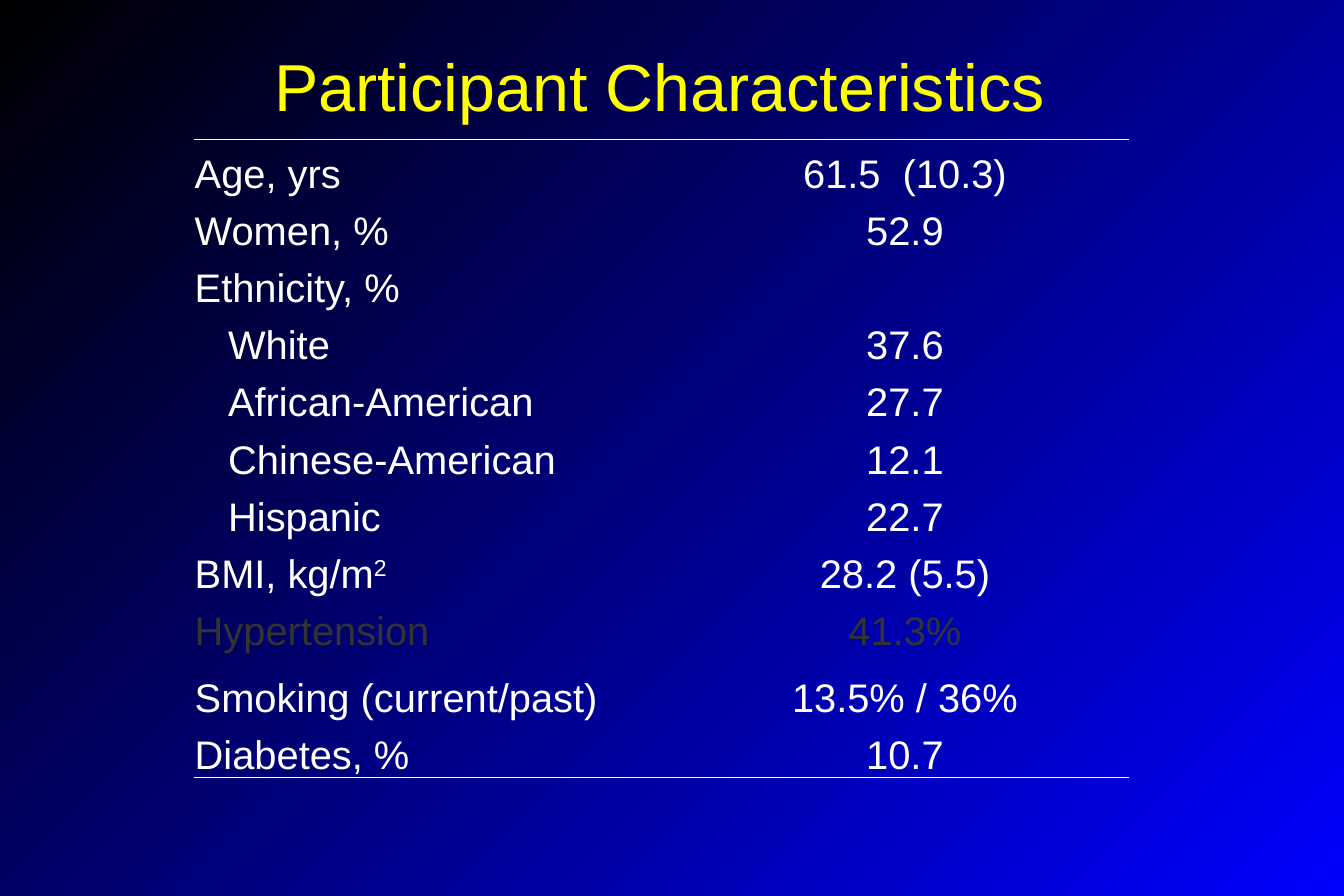
from lxml.etree import SubElement
from pptx import Presentation
from pptx.dml.color import RGBColor
from pptx.enum.text import MSO_ANCHOR as Anchor, PP_ALIGN as Align
from pptx.oxml.ns import qn
from pptx.util import Inches, Pt

TITLE = "Participant Characteristics"
# label, value, indent level, colour
CHARACTERISTICS = [
    ("Age, yrs", "61.5  (10.3)", 0, "white"),
    ("Women, %", "52.9", 0, "white"),
    ("Ethnicity, %", "", 0, "white"),
    ("White", "37.6", 1, "white"),
    ("African-American", "27.7", 1, "white"),
    ("Chinese-American", "12.1", 1, "white"),
    ("Hispanic", "22.7", 1, "white"),
    ("BMI, kg/m^2", "28.2 (5.5)", 0, "white"),
    ("Hypertension", "41.3%", 0, "grey"),
    ("Smoking (current/past)", "13.5% / 36%", 0, "white"),
    ("Diabetes, %", "10.7", 0, "white"),
]
COLORS = {"black": "000000", "blue": "0000FF", "yellow": "FFFF00",
          "white": "FFFFFF", "grey": "333333"}

WIDTH, HEIGHT = 11.25, 7.5
TABLE_LEFT, TABLE_TOP, TABLE_HEIGHT = 1.62, 1.17, 5.34
COLUMNS = (4.08, 3.75)
TALL_ROW, TALL_HEIGHT = 9, 0.56
ROW_HEIGHT = (TABLE_HEIGHT - TALL_HEIGHT) / (len(CHARACTERISTICS) - 1)
CELL_MARGIN, INDENT = 0.01, 0.28


def rgb(name):
    return RGBColor.from_string(COLORS[name])


def write(frame, text, size=24, color="white", align=Align.LEFT):
    """Fill the first paragraph; what follows a ^ is set as superscript."""
    paragraph = frame.paragraphs[0]
    paragraph.alignment = align
    for level, part in enumerate(text.split("^")):
        run = paragraph.add_run()
        run.text = part
        run.font.name = "Arial"
        run.font.size = Pt(size)
        run.font.color.rgb = rgb(color)
        if level:
            run.font._element.set("baseline", "30000")


def rule_cell(cell, ruled):
    """Draw white 1 pt rules on the ruled sides and clear the others."""
    properties = cell._tc.get_or_add_tcPr()
    for side in "LRTB":
        line = SubElement(properties, qn(f"a:ln{side}"), w=str(Pt(1)))
        if side in ruled:
            fill = SubElement(line, qn("a:solidFill"))
            SubElement(fill, qn("a:srgbClr"), val=COLORS["white"])
        else:
            SubElement(line, qn("a:noFill"))


def add_title(slide):
    box = slide.shapes.add_textbox(0, Inches(0.25), Inches(11.04), Inches(0.92))
    box.text_frame.word_wrap = True
    box.text_frame.vertical_anchor = Anchor.MIDDLE
    write(box.text_frame, TITLE, size=40, color="yellow", align=Align.CENTER)


def add_characteristics(slide):
    last = len(CHARACTERISTICS) - 1
    table = slide.shapes.add_table(
        last + 1, len(COLUMNS), Inches(TABLE_LEFT), Inches(TABLE_TOP),
        Inches(sum(COLUMNS)), Inches(TABLE_HEIGHT)).table
    table.first_row = table.horz_banding = False
    for column, width in zip(table.columns, COLUMNS):
        column.width = Inches(width)
    for r, (label, value, level, color) in enumerate(CHARACTERISTICS):
        table.rows[r].height = Inches(TALL_HEIGHT if r == TALL_ROW else ROW_HEIGHT)
        ruled = {0: "T", last: "B"}.get(r, "")
        cells = ((label, Align.LEFT, level * INDENT), (value, Align.CENTER, 0))
        for c, (text, align, indent) in enumerate(cells):
            cell = table.cell(r, c)
            cell.margin_left = Inches(CELL_MARGIN + indent)
            cell.margin_right = cell.margin_top = Inches(CELL_MARGIN)
            cell.margin_bottom = 0
            cell.vertical_anchor = Anchor.BOTTOM
            rule_cell(cell, ruled)
            cell.fill.background()
            if text:
                write(cell.text_frame, text, color=color, align=align)


def main():
    deck = Presentation()
    deck.slide_width, deck.slide_height = Inches(WIDTH), Inches(HEIGHT)
    slide = deck.slides.add_slide(deck.slide_layouts[6])
    backdrop = slide.background.fill
    backdrop.gradient()
    backdrop.gradient_angle = 315
    for stop, name in zip(backdrop.gradient_stops, ("black", "blue")):
        stop.color.rgb = rgb(name)
    add_title(slide)
    add_characteristics(slide)
    deck.save("out.pptx")


if __name__ == "__main__":
    main()
